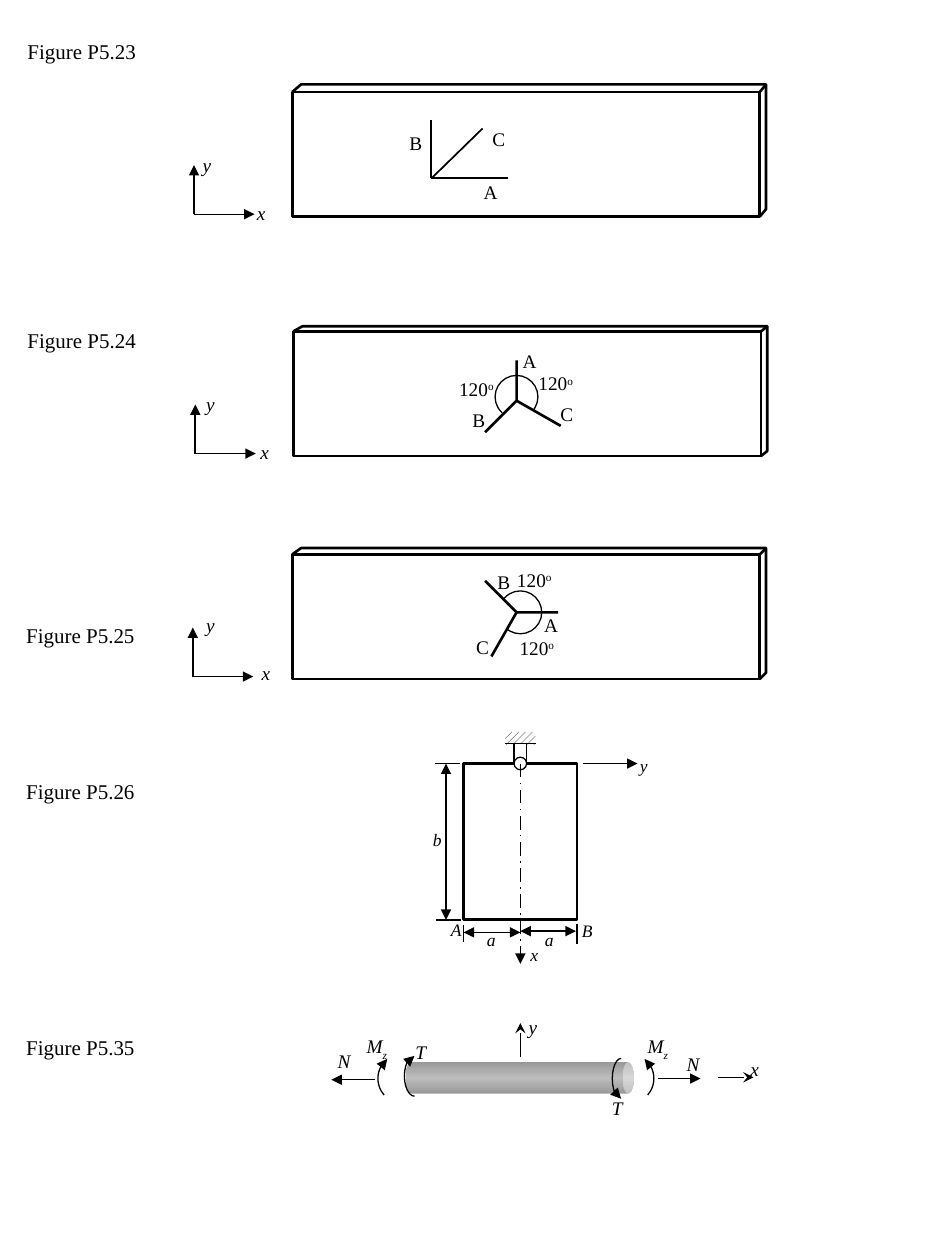
import lxml.etree
import pptx
import pptx.dml.color
import pptx.enum.dml
import pptx.enum.shapes
import pptx.enum.text
import pptx.oxml.ns
import pptx.util

Inches = pptx.util.Inches
SHAPE = pptx.enum.shapes.MSO_SHAPE
ALIGN = pptx.enum.text.PP_ALIGN
FONT = "Times New Roman"
COLORS = {"ink": "000000", "paper": "FFFFFF", "edge": "999999", "shine": "BDBDBD"}

TITLES = [("Figure P5.23", 0.12, 0.26), ("Figure P5.24", 0.12, 2.55),
          ("Figure P5.25", 0.11, 4.89), ("Figure P5.26", 0.11, 6.13),
          ("Figure P5.35", 0.11, 8.16)]

PLATE_WIDTH, PLATE_HEIGHT = 3.71, 0.99
PLATES = [
    {"corner": (2.32, 0.73), "rise": 0.06, "origin": (1.54, 1.7), "weight": 0.75},
    {"corner": (2.33, 2.63), "rise": 0.04, "origin": (1.55, 3.6), "weight": 1},
    {"corner": (2.32, 4.4), "rise": 0.05, "origin": (1.53, 5.37), "weight": 1},
]
GAUGE_LINES = [
    ((3.42, 1.41), (3.42, 0.95), 1), ((3.42, 1.41), (4.03, 1.41), 1),
    ((3.43, 1.41), (3.83, 1.02), 1),
    ((4.1, 3.18), (4.45, 3.38), 1.5), ((4.1, 4.86), (3.9, 5.21), 1.5),
]
ROSETTES = [[(4.1, 2.86), (4.1, 3.18), (3.85, 3.43)],
            [(4.43, 4.86), (4.1, 4.86), (3.85, 4.61)]]
GAUGE_LABELS = [
    ("A", 3.74, 1.38), ("B", 3.15, 0.99), ("C", 3.81, 0.96),
    ("A", 4.05, 2.72), ("B", 3.65, 3.19), ("C", 4.35, 3.14),
    ("A", 4.22, 4.82), ("B", 3.85, 4.48), ("C", 3.68, 4.99),
]
AXIS_LABELS = [("x", 1.94, 1.55), ("y", 1.51, 1.17)]
CENTERED_AXIS_LABELS = [("y", 1.56, 3.11), ("x", 1.99, 3.49),
                        ("y", 1.56, 4.87), ("x", 2, 5.25)]
ANGLE_LABELS = [(4.2, 2.95), (3.57, 2.99), (4.03, 4.51), (4.05, 5.05)]

ARCS = [
    ((4.1, 3.15), (0.17, 0.17), 270, 40, None, None),
    ((4.1, 3.15), (0.17, 0.17), 132, 270, None, None),
    ((4.13, 4.86), (0.17, 0.17), 219, 0, None, None),
    ((4.13, 4.86), (0.17, 0.17), 0, 127, None, None),
    ((4.99, 8.56), (0.2, 0.2), 309, 41, "triangle", None),
    ((3.2, 8.56), (0.2, 0.2), 139, 231, None, "triangle"),
    ((4.93, 8.56), (0.07, 0.16), 90, 270, "triangle", None),
    ((3.29, 8.54), (0.08, 0.16), 90, 270, None, "triangle"),
]

PANEL_LINES = [
    ((4.01, 5.9), (4.25, 5.9), 0.75, None, None),
    ((4.63, 6.06), (5.06, 6.06), 1, None, "triangle"),
    ((3.65, 6.06), (3.45, 6.06), 1, None, None),
    ((3.66, 7.3), (3.46, 7.3), 1, None, None),
    ((3.54, 7.3), (3.54, 6.06), 1, "triangle", "triangle"),
    ((3.68, 7.34), (3.68, 7.48), 0.75, None, None),
    ((4.58, 7.33), (4.58, 7.49), 0.75, None, None),
    ((3.68, 7.4), (4.13, 7.4), 0.75, "triangle", "triangle"),
    ((4.13, 7.39), (4.57, 7.39), 0.75, "triangle", "triangle"),
]
PANEL_LABELS = [("A", 3.55, 7.29), ("B", 4.59, 7.3), ("y", 5.04, 5.99), ("x", 4.17, 7.49),
                ("a", 3.83, 7.37), ("a", 4.29, 7.37), ("b", 3.4, 6.58)]

SHAFT_LINES = [
    ((4.13, 8.39), (4.13, 8.12), "stealth"), ((5.7, 8.55), (5.98, 8.55), "stealth"),
    ((5.22, 8.56), (5.56, 8.56), "triangle"), ((2.98, 8.57), (2.63, 8.57), "triangle"),
]
SHAFT_LABELS = [("x", "", 5.9, 8.39), ("y", "", 4.14, 8.06), ("N", "", 5.41, 8.35),
                ("N", "", 2.64, 8.33), ("M", "z", 5.13, 8.21), ("M", "z", 2.9, 8.21),
                ("T", "", 4.81, 8.7), ("T", "", 3.25, 8.26)]

deck = pptx.Presentation()
deck.slide_width, deck.slide_height = Inches(7.5), Inches(10)
page = deck.slides.add_slide(deck.slide_layouts[6])


def color(name):
    return pptx.dml.color.RGBColor.from_string(COLORS[name])


def add_xml(parent, tag, **attributes):
    return lxml.etree.SubElement(parent, pptx.oxml.ns.qn(tag), **attributes)


def style_line(shape, weight, head=None, tail=None, dash=None):
    shape.line.color.rgb = color("ink")
    shape.line.width = pptx.util.Pt(weight)
    if dash:
        shape.line.dash_style = dash
    outline = shape.element.spPr.find(pptx.oxml.ns.qn("a:ln"))
    for tag, kind in (("a:headEnd", head), ("a:tailEnd", tail)):
        if kind:
            add_xml(outline, tag, type=kind)


def add_line(start, end, weight, head=None, tail=None, dash=None):
    line = page.shapes.add_connector(pptx.enum.shapes.MSO_CONNECTOR.STRAIGHT,
                                     *map(Inches, start + end))
    style_line(line, weight, head, tail, dash)
    add_xml(line.element.spPr, "a:effectLst")
    return line


def add_shape(kind, left, top, width, height, weight=None):
    shape = page.shapes.add_shape(kind, *map(Inches, (left, top, width, height)))
    shape.shadow.inherit = False
    shape.fill.solid()
    shape.fill.fore_color.rgb = color("paper")
    if weight:
        style_line(shape, weight)
    else:
        shape.line.fill.background()
    return shape


def add_outline(points, weight):
    corners = [(Inches(x), Inches(y)) for x, y in points]
    builder = page.shapes.build_freeform(*corners[0])
    builder.add_line_segments(corners[1:], close=False)
    outline = builder.convert_to_shape()
    outline.shadow.inherit = False
    outline.fill.background()
    style_line(outline, weight)


def add_arc(center, radii, start, end, head, tail):
    (x, y), (across, down) = center, radii
    arc = add_shape(SHAPE.ARC, x - across, y - down, 2 * across, 2 * down)
    arc.fill.background()
    style_line(arc, 0.75, head, tail)
    for index, degrees in enumerate((start, end)):
        arc.adjustments[index] = degrees * 0.6


def add_label(text, left, top, width, height, size=11, italic=False,
              inset=False, wrap=True, shifted="", baseline=0):
    box = page.shapes.add_textbox(*map(Inches, (left, top, width, height)))
    frame = box.text_frame
    frame.word_wrap = wrap
    para = frame.paragraphs[0]
    if not inset:
        frame.margin_left = frame.margin_right = frame.margin_top = frame.margin_bottom = 0
        para.alignment = ALIGN.CENTER
    para.font.name, para.font.size, para.font.italic = FONT, pptx.util.Pt(size), italic
    para.font.color.rgb = color("ink")
    para.add_run().text = text
    if shifted:
        span = para.add_run()
        span.text = shifted
        span._r.get_or_add_rPr().set("baseline", str(baseline))


for text, left, top in TITLES:
    add_label(text, left, top, 1.07, 0.3, size=12, inset=True, wrap=False)

for plate in PLATES:
    left, top = plate["corner"]
    rise, weight = plate["rise"], plate["weight"]
    right, bottom = left + PLATE_WIDTH, top + PLATE_HEIGHT
    back = right + 0.05
    add_shape(SHAPE.RECTANGLE, left, top, PLATE_WIDTH, PLATE_HEIGHT, 1.5)
    add_outline([(left, top), (left + 0.07, top - rise), (back, top - rise),
                 (back, bottom - rise), (right, bottom)], 1.5)
    add_line((right, top), (back, top - rise), 1.5)
    x, y = plate["origin"]
    add_line((x, y), (x, y - 0.39), weight, tail="triangle")
    add_line((x, y), (x + 0.48, y), weight, tail="triangle")

for start, end, weight in GAUGE_LINES:
    add_line(start, end, weight)
for points in ROSETTES:
    add_outline(points, 1.5)
for text, left, top in GAUGE_LABELS:
    add_label(text, left, top, 0.33, 0.3, inset=True)
for text, left, top in AXIS_LABELS:
    add_label(text, left, top, 0.33, 0.3, italic=True, inset=True)
for text, left, top in CENTERED_AXIS_LABELS:
    add_label(text, left, top, 0.22, 0.19, italic=True)
for left, top in ANGLE_LABELS:
    add_label("120", left, top, 0.42, 0.19, shifted="o", baseline=30000)

panel = add_shape(SHAPE.RECTANGLE, 3.68, 6.06, 0.9, 1.24, 1.5)
ceiling = add_shape(SHAPE.RECTANGLE, 4.01, 5.81, 0.24, 0.1)
ceiling.fill.patterned()
ceiling.fill.pattern = pptx.enum.dml.MSO_PATTERN.WIDE_UPWARD_DIAGONAL
ceiling.fill.fore_color.rgb, ceiling.fill.back_color.rgb = color("ink"), color("paper")
add_shape(SHAPE.RECTANGLE, 4.08, 5.9, 0.1, 0.15, 0.75)
add_shape(SHAPE.OVAL, 4.08, 6.01, 0.1, 0.1, 0.75)
axis = add_line((4.13, 6.06), (4.13, 7.65), 1, tail="triangle",
                dash=pptx.enum.dml.MSO_LINE.LONG_DASH_DOT)
axis.begin_connect(panel, 0)
for line in PANEL_LINES:
    add_line(*line)
for text, left, top in PANEL_LABELS:
    add_label(text, left, top, 0.14, 0.19, size=10, italic=True)

shaft = add_shape(SHAPE.CAN, 4.0, 7.65, 0.25, 1.81)
shaft.rotation = 90
shaft.adjustments[0] = 0.35
shaft.fill.gradient()
shaft.fill.gradient_angle = 0
gradient = shaft.element.spPr.find(pptx.oxml.ns.qn("a:gradFill"))
stops = gradient.find(pptx.oxml.ns.qn("a:gsLst"))
stops.clear()
for position, name in ((0, "edge"), (50000, "shine"), (100000, "edge")):
    add_xml(add_xml(stops, "a:gs", pos=str(position)), "a:srgbClr", val=COLORS[name])

for start, end, tail in SHAFT_LINES:
    add_line(start, end, 0.75, tail=tail)
for arc in ARCS:
    add_arc(*arc)
for text, shifted, left, top in SHAFT_LABELS:
    add_label(text, left, top, 0.18, 0.18, italic=True, shifted=shifted, baseline=-30000)

deck.save("out.pptx")
